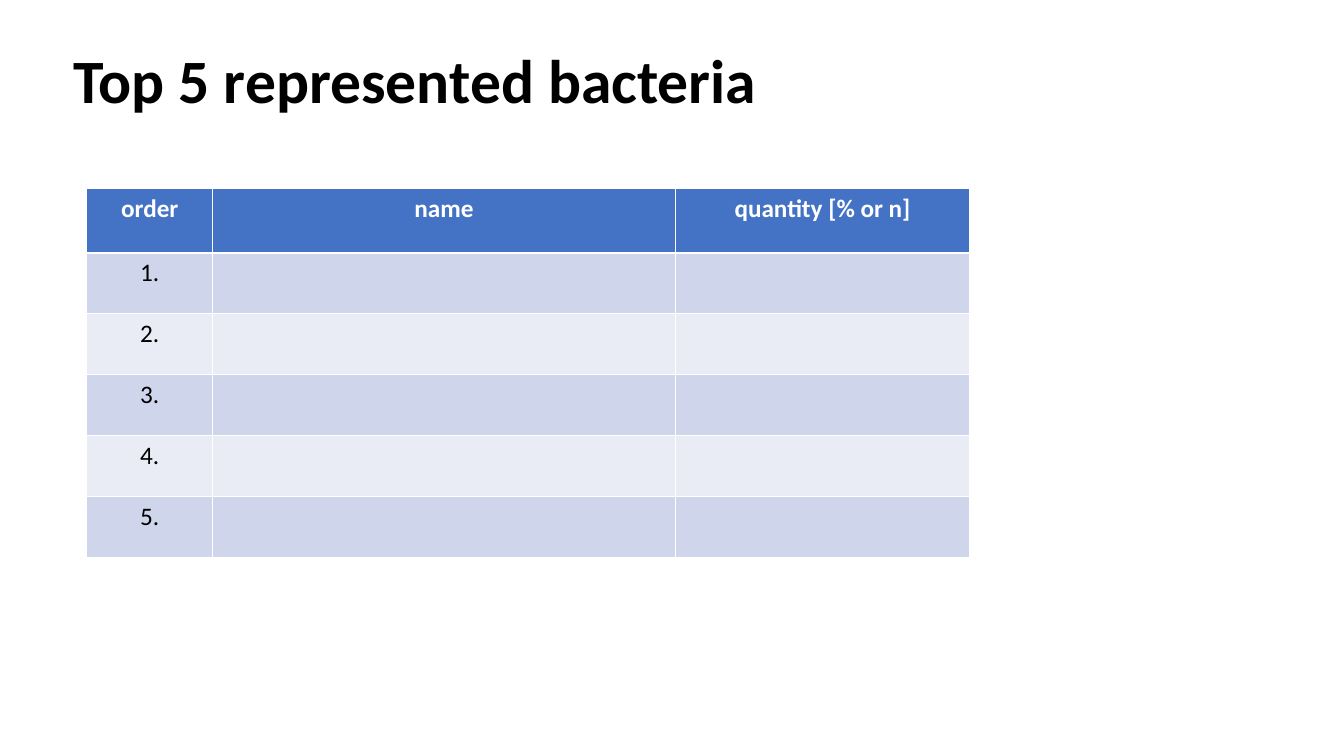
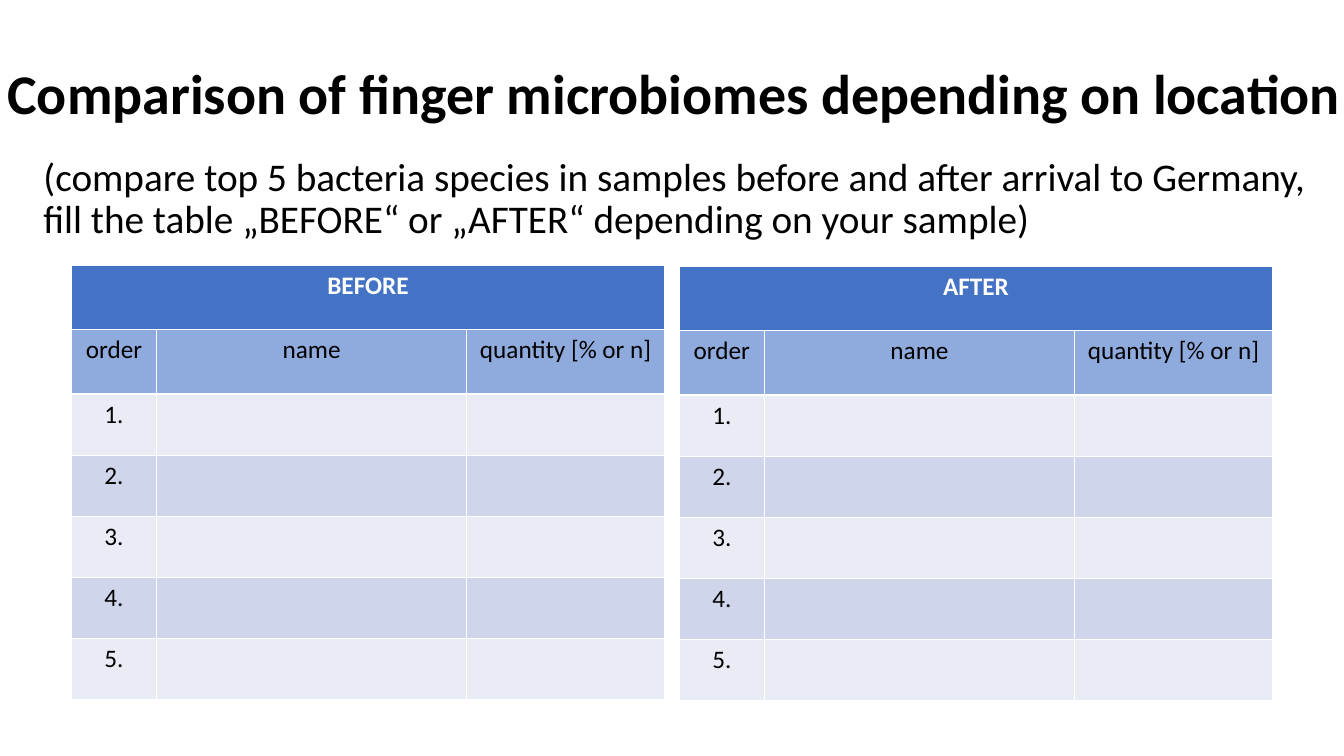
from pptx import Presentation
from pptx.dml.color import RGBColor
from pptx.enum.text import MSO_ANCHOR, MSO_AUTO_SIZE, PP_ALIGN
from pptx.oxml.ns import qn
from pptx.util import Inches, Pt

COLORS = {
    "header": "4472C4",
    "subheader": "8FAADC",
    "dark_band": "CFD5EA",
    "light_band": "E9EBF5",
    "text": "000000",
    "header_text": "FFFFFF",
}
FONT = "Calibri"
WIDTH, HEIGHT = Inches(13.33), Inches(7.5)
HEADER_ROW = 8.53
LABELS = ["order", "name", "quantity [% or n]"]
RANKS = [[f"{rank}.", "", ""] for rank in range(1, 6)]


def color(name):
    """Return the named palette colour."""
    return RGBColor.from_string(COLORS[name])


def scale(box):
    """Turn a box in percent of the slide into lengths."""
    left, top, width, height = box
    return (int(WIDTH * left / 100), int(HEIGHT * top / 100),
            int(WIDTH * width / 100), int(HEIGHT * height / 100))


def style(paragraph, size, ink="text", bold=False, align=PP_ALIGN.CENTER):
    """Format a whole paragraph."""
    paragraph.alignment = align
    paragraph.font.name = FONT
    paragraph.font.size = Pt(size)
    paragraph.font.bold = bold
    paragraph.font.color.rgb = color(ink)


def fill_placeholder(holder, box, text, size, anchor, bold=False, align=PP_ALIGN.LEFT):
    """Move a placeholder into its box and write its text."""
    holder.left, holder.top, holder.width, holder.height = scale(box)
    frame = holder.text_frame
    frame.text = text
    frame.word_wrap = True
    frame.auto_size = MSO_AUTO_SIZE.NONE
    frame.vertical_anchor = anchor
    paragraph = frame.paragraphs[0]
    paragraph.line_spacing = 0.9
    style(paragraph, size, bold=bold, align=align)
    return paragraph


def add_title(slide, box, text, size, align=PP_ALIGN.LEFT):
    """Place the bold slide title."""
    fill_placeholder(slide.shapes.title, box, text, size, MSO_ANCHOR.MIDDLE, True, align)


def add_instruction(slide, box, text):
    """Place the unbulleted instruction under the title."""
    paragraph = fill_placeholder(slide.placeholders[1], box, text, 28, MSO_ANCHOR.TOP)
    paragraph.space_before = Pt(10)
    properties = paragraph._p.get_or_add_pPr()
    properties.set("marL", "0")
    properties.set("indent", "0")
    properties.append(properties.makeelement(qn("a:buNone"), {}))


def add_ranking(slide, box, column_weights, heading=None):
    """Draw a ranking table, with an optional merged heading row."""
    rows = ([[heading, "", ""]] if heading else []) + [LABELS] + RANKS
    header_count = len(rows) - len(RANKS)
    left, top, width, height = scale(box)
    table = slide.shapes.add_table(len(rows), len(LABELS), left, top, width, height).table
    for column, weight in zip(table.columns, column_weights):
        column.width = int(width * weight / sum(column_weights))
    header_height = int(HEIGHT * HEADER_ROW / 100)
    rank_height = (height - header_count * header_height) // len(RANKS)
    for index, values in enumerate(rows):
        table.rows[index].height = header_height if index < header_count else rank_height
        if index == 0:
            band = "header"
        elif index < header_count:
            band = "subheader"
        else:
            band = "dark_band" if index % 2 else "light_band"
        for cell, value in zip(table.rows[index].cells, values):
            cell.fill.solid()
            cell.fill.fore_color.rgb = color(band)
            cell.text = value
            style(cell.text_frame.paragraphs[0], 18,
                  "text" if index else "header_text", index == 0)
    if heading:
        table.cell(0, 0).merge(table.cell(0, len(LABELS) - 1))


def build_top_five(deck):
    """Build the slide with a single ranking."""
    slide = deck.slides.add_slide(deck.slide_layouts[5])
    add_title(slide, (4.73, 1.33, 97.6, 19.33), "Top 5 represented bacteria", 44)
    add_ranking(slide, (6.45, 24.93, 65.72, 48.8), (1.25, 4.58, 2.92))


def build_comparison(deck):
    """Build the slide with the before and after rankings."""
    slide = deck.slides.add_slide(deck.slide_layouts[1])
    add_title(slide, (-2.18, 3.07, 104.65, 19.33),
              "Comparison of finger microbiomes depending on location", 40, PP_ALIGN.CENTER)
    add_instruction(slide, (2.48, 20.13, 96.02, 13.47),
                    "(compare top 5 bacteria species in samples before and after arrival to "
                    "Germany, fill the table „BEFORE“ or „AFTER“ depending on your sample)")
    for heading, left, top in (("BEFORE", 5.33, 35.07), ("AFTER", 50.56, 35.2)):
        add_ranking(slide, (left, top, 44.11, 57.47), (0.84, 3.08, 1.96), heading)


def main():
    """Build and save the presentation."""
    deck = Presentation()
    deck.slide_width, deck.slide_height = WIDTH, HEIGHT
    build_top_five(deck)
    build_comparison(deck)
    deck.save("out.pptx")


if __name__ == "__main__":
    main()
